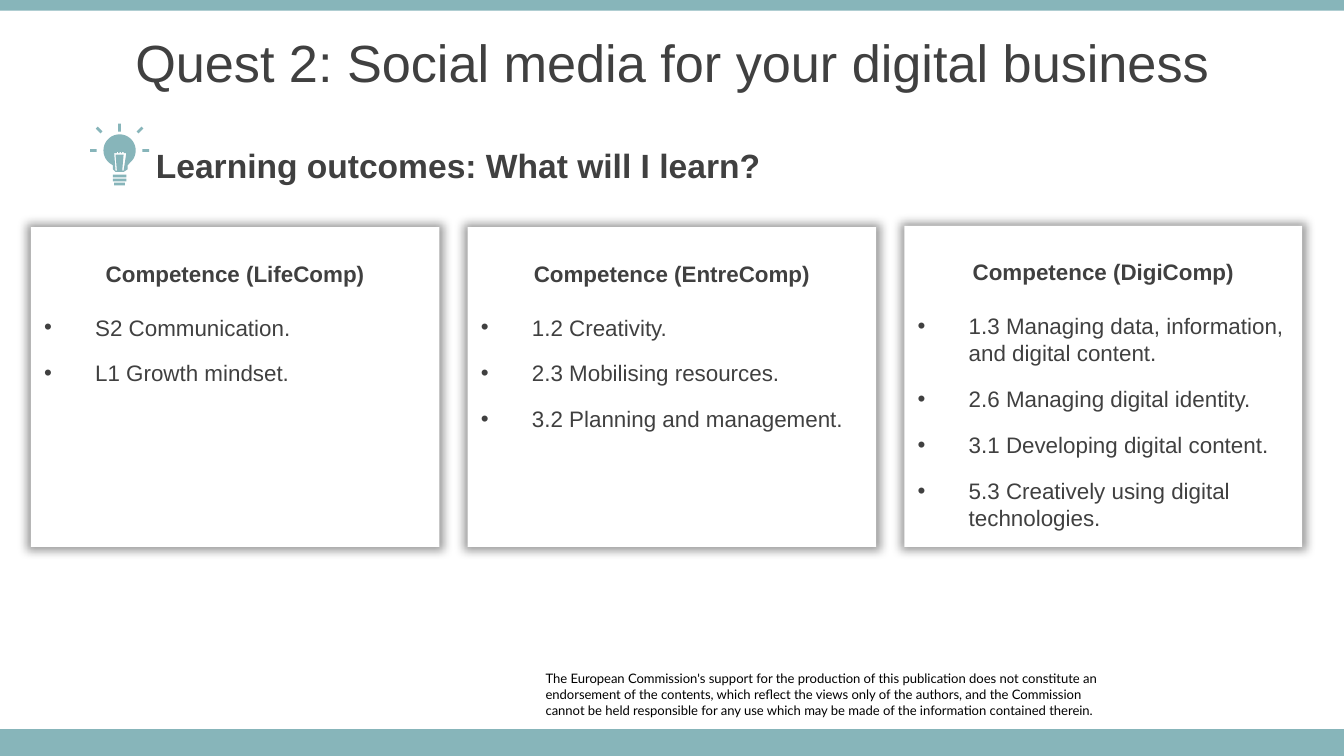
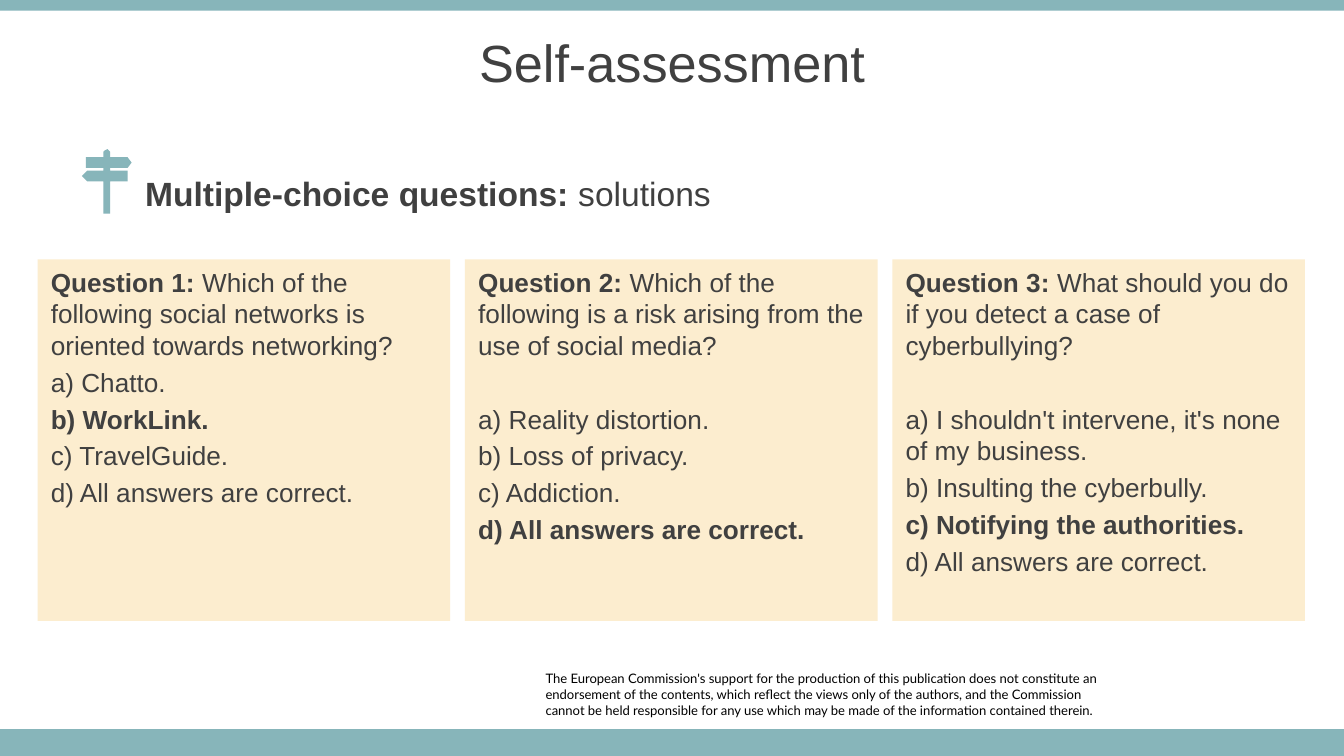
from math import cos, hypot, radians, sin

from lxml.etree import SubElement
from pptx import Presentation
from pptx.dml.color import RGBColor
from pptx.enum.shapes import MSO_SHAPE as Shape
from pptx.enum.text import MSO_ANCHOR as Anchor, MSO_AUTO_SIZE as AutoSize, PP_ALIGN as Align
from pptx.oxml.ns import qn
from pptx.util import Inches, Pt

TEAL = RGBColor(0x87, 0xB5, 0xBA)
CREAM = RGBColor(0xFC, 0xED, 0xCF)
WHITE = RGBColor(0xFF, 0xFF, 0xFF)
GREY = RGBColor(0x40, 0x40, 0x40)
BLACK = RGBColor(0x00, 0x00, 0x00)
WIDTH = 10
HEIGHT = WIDTH * 9 / 16
LINE = 1.21  # line height as a share of the font size


def write(frame, text, lead="", size=12, bold=False, font="Arial", color=GREY,
          align=Align.LEFT, before=0, after=0, bullet=False, line=None):
    """Add one paragraph, with an optional bold lead-in."""
    first = frame.paragraphs[0]
    paragraph = frame.add_paragraph() if first.runs else first
    properties = paragraph._p.get_or_add_pPr()
    indent = Inches(0.38) if bullet else 0
    properties.set("marL", str(indent))
    properties.set("indent", str(-indent))
    if bullet:
        SubElement(properties, qn("a:buFont")).set("typeface", "Arial")
        SubElement(properties, qn("a:buChar")).set("char", "•")
    else:
        SubElement(properties, qn("a:buNone"))
    paragraph.alignment = align
    paragraph.space_before, paragraph.space_after = Pt(before), Pt(after)
    paragraph.line_spacing = line or 1.0
    for words, heavy in ((lead, True), (text, bold)):
        if words:
            run = paragraph.add_run()
            run.text = words
            run.font.name, run.font.size, run.font.bold = font, Pt(size), heavy
            run.font.color.rgb = color


def finish(shape, fill, top_inset=0.05):
    """Give a shape a plain fill and set up its text frame."""
    shape.shadow.inherit = False
    shape.fill.solid()
    shape.fill.fore_color.rgb = fill
    shape.line.fill.background()
    frame = shape.text_frame
    frame.word_wrap = True
    frame.vertical_anchor = Anchor.TOP
    frame.margin_top = Inches(top_inset)
    return frame


presentation = Presentation()
presentation.slide_width, presentation.slide_height = Inches(WIDTH), Inches(HEIGHT)
layout = presentation.slide_layouts[1]
outcomes, assessment = [presentation.slides.add_slide(layout) for _ in range(2)]

# Footer and bands, moved to the layout that both slides share
DISCLAIMER = [
    "The European Commission's support for the production of this publication does not "
    "constitute an endorsement of the contents, which reflect the views only of the authors, "
    "and the Commission",
    "cannot be held responsible for any use which may be made of the information "
    "contained therein.",
]
footer = outcomes.shapes.add_textbox(Inches(4.06), Inches(4.99), Inches(4.17), Inches(0.35))
frame = footer.text_frame
frame.word_wrap = True
frame.auto_size = AutoSize.SHAPE_TO_FIT_TEXT
frame.margin_left = frame.margin_right = frame.margin_top = frame.margin_bottom = 0
for sentence in DISCLAIMER:
    write(frame, sentence, size=7, font="Lato", color=BLACK)
shared = [footer]
for top, height in ((HEIGHT - 0.2, 0.2), (0, 0.08)):
    band = outcomes.shapes.add_shape(
        Shape.RECTANGLE, 0, Inches(top), Inches(WIDTH), Inches(height))
    finish(band, TEAL)
    shared.append(band)
for number, shape in enumerate(shared, start=100):
    shape._element.nvSpPr.cNvPr.set("id", str(number))
    layout.shapes._spTree.append(shape._element)

# Title and subtitle of both slides
HEADINGS = [
    (outcomes, "Quest 2: Social media for your digital business",
     "Learning outcomes: What will I learn?", "", (1.06, 1.07, 4.88, 0.31)),
    (assessment, "Self-assessment",
     "Multiple-choice questions: ", "solutions", (0.98, 1.28, 6.69, 0.31)),
]
for slide, title, lead, rest, subtitle_box in HEADINGS:
    subtitle = slide.placeholders[1]
    for placeholder, box in ((slide.shapes.title, (0, 0.14, WIDTH, 0.63)),
                             (subtitle, subtitle_box)):
        placeholder.left, placeholder.top, placeholder.width, placeholder.height = map(Inches, box)
        frame = placeholder.text_frame
        frame.word_wrap = True
        frame.auto_size = AutoSize.NONE
        frame.vertical_anchor = Anchor.MIDDLE
    write(slide.shapes.title.text_frame, title, size=28, align=Align.CENTER)
    write(subtitle.text_frame, rest, lead=lead, size=18)

# Slide 1: light bulb, as one outline of glass, filament, base and rays
CENTER_X, CENTER_Y, RADIUS = 0.89, 1.12, 0.12
glass = [(CENTER_X + RADIUS * cos(radians(angle)), CENTER_Y + RADIUS * sin(radians(angle)))
         for angle in range(130, 411, 10)]
glass += [(0.95, 1.23), (0.95, 1.26), (0.92, 1.28), (0.86, 1.28), (0.84, 1.26), (0.84, 1.23)]
filament = [(0.85, 1.14)]
for x in (0.87, 0.89, 0.91):
    filament += [(x, 1.14), (x, 1.13), (x + 0.01, 1.13), (x + 0.01, 1.14)]
filament += [(0.94, 1.14), (0.92, 1.27), (0.91, 1.27), (0.92, 1.15),
             (0.86, 1.15), (0.87, 1.27), (0.86, 1.27)]
bars = [(CENTER_X - half, y, CENTER_X + half, y)
        for half, y in ((0.05, 1.31), (0.05, 1.34), (0.04, 1.37))]
for angle, inner, outer in ((180, 0.17, 0.22), (225, 0.19, 0.24), (270, 0.14, 0.2),
                            (315, 0.19, 0.24), (360, 0.17, 0.22)):
    across, down = cos(radians(angle)), sin(radians(angle))
    bars.append((CENTER_X + inner * across, CENTER_Y + inner * down,
                 CENTER_X + outer * across, CENTER_Y + outer * down))
contours = [glass, filament]
for x1, y1, x2, y2 in bars:
    length = hypot(x2 - x1, y2 - y1)
    dx, dy = 0.01 * (y1 - y2) / length, 0.01 * (x2 - x1) / length
    contours.append([(x1 + dx, y1 + dy), (x2 + dx, y2 + dy),
                     (x2 - dx, y2 - dy), (x1 - dx, y1 - dy)])

# Slide 2: signpost
signpost = [
    (0.78, 1.12), (0.8, 1.11), (0.81, 1.12), (0.82, 1.13), (0.82, 1.17), (0.95, 1.17),
    (0.98, 1.21), (0.95, 1.25), (0.82, 1.25), (0.82, 1.27), (0.95, 1.27), (0.95, 1.35),
    (0.82, 1.35), (0.82, 1.59), (0.77, 1.59), (0.77, 1.35), (0.65, 1.35), (0.61, 1.31),
    (0.65, 1.27), (0.77, 1.27), (0.77, 1.25), (0.64, 1.25), (0.64, 1.17), (0.77, 1.17),
    (0.77, 1.13)]

# Icons of both slides
for slide, icon in ((outcomes, contours), (assessment, [signpost])):
    builder = None
    for contour in icon:
        points = [(Inches(x), Inches(y)) for x, y in contour]
        if builder is None:
            builder = slide.shapes.build_freeform(*points[0])
        else:
            builder.move_to(*points[0])
        builder.add_line_segments(points[1:], close=True)
    finish(builder.convert_to_shape(), TEAL)

# Slide 1: competence cards
COMPETENCES = [
    ("Competence (LifeComp)", 1.69, 3.04, ["S2 Communication.", "L1 Growth mindset."]),
    ("Competence (EntreComp)", 1.69, 3.04,
     ["1.2 Creativity.", "2.3 Mobilising resources.", "3.2 Planning and management."]),
    ("Competence (DigiComp)", 1.68, 2.96,
     ["1.3 Managing data, information, and digital content.", "2.6 Managing digital identity.",
      "3.1 Developing digital content.", "5.3 Creatively using digital technologies."]),
]
CARD_BOTTOM = 4.07
card_line = Pt(12 * LINE)
for column, (heading, top, width, skills) in enumerate(COMPETENCES):
    card = outcomes.shapes.add_shape(
        Shape.RECTANGLE, Inches(0.23 + 3.25 * column), Inches(top),
        Inches(width), Inches(CARD_BOTTOM - top))
    frame = finish(card, WHITE, top_inset=0.24)
    effects = card._element.spPr.find(qn("a:effectLst"))
    shadow = SubElement(effects, qn("a:outerShdw"), blurRad=str(Pt(5)), sx="102000",
                        sy="102000", algn="ctr", rotWithShape="0")
    shade = SubElement(shadow, qn("a:srgbClr"), val=str(BLACK))
    SubElement(shade, qn("a:alpha"), val="40000")
    write(frame, heading, bold=True, align=Align.CENTER, after=12 * LINE, line=card_line)
    for skill in skills:
        write(frame, skill, bullet=True, after=10, line=card_line)

# Slide 2: questions, each with the index of its right answer and the gap above the answers
SMALL_GAP = 14 * 0.2
WIDE_GAP = 14 * LINE + 2 * SMALL_GAP
QUESTIONS = [
    ("Which of the following social networks is oriented towards networking?", 1, SMALL_GAP,
     ["a) Chatto.", "b) WorkLink.", "c) TravelGuide.", "d) All answers are correct."]),
    ("Which of the following is a risk arising from the use of social media?", 3, WIDE_GAP,
     ["a) Reality distortion.", "b) Loss of privacy.", "c) Addiction.",
      "d) All answers are correct."]),
    ("What should you do if you detect a case of cyberbullying?", 2, WIDE_GAP,
     ["a) I shouldn't intervene, it's none of my business.", "b) Insulting the cyberbully.",
      "c) Notifying the authorities.", "d) All answers are correct."]),
]
question_line = Pt(14 * LINE)
for column, (question, right, gap, answers) in enumerate(QUESTIONS):
    panel = assessment.shapes.add_shape(
        Shape.RECTANGLE, Inches(0.28 + 3.18 * column), Inches(1.93), Inches(3.07), Inches(2.69))
    frame = finish(panel, CREAM)
    write(frame, question, lead=f"Question {column + 1}: ", size=14, line=question_line)
    for index, answer in enumerate(answers):
        write(frame, answer, size=14, bold=index == right,
              before=SMALL_GAP if index else gap, line=question_line)

presentation.save("out.pptx")
